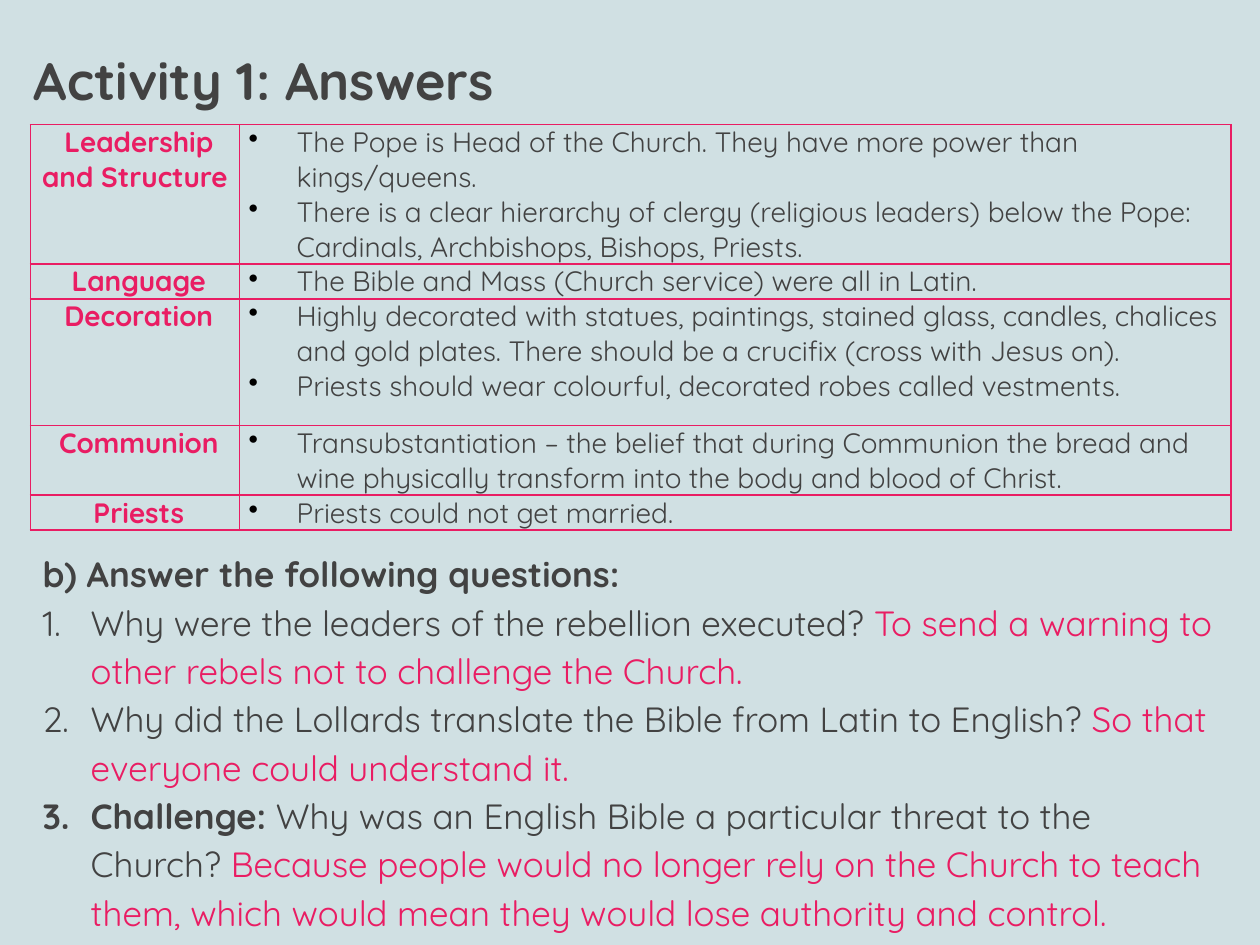
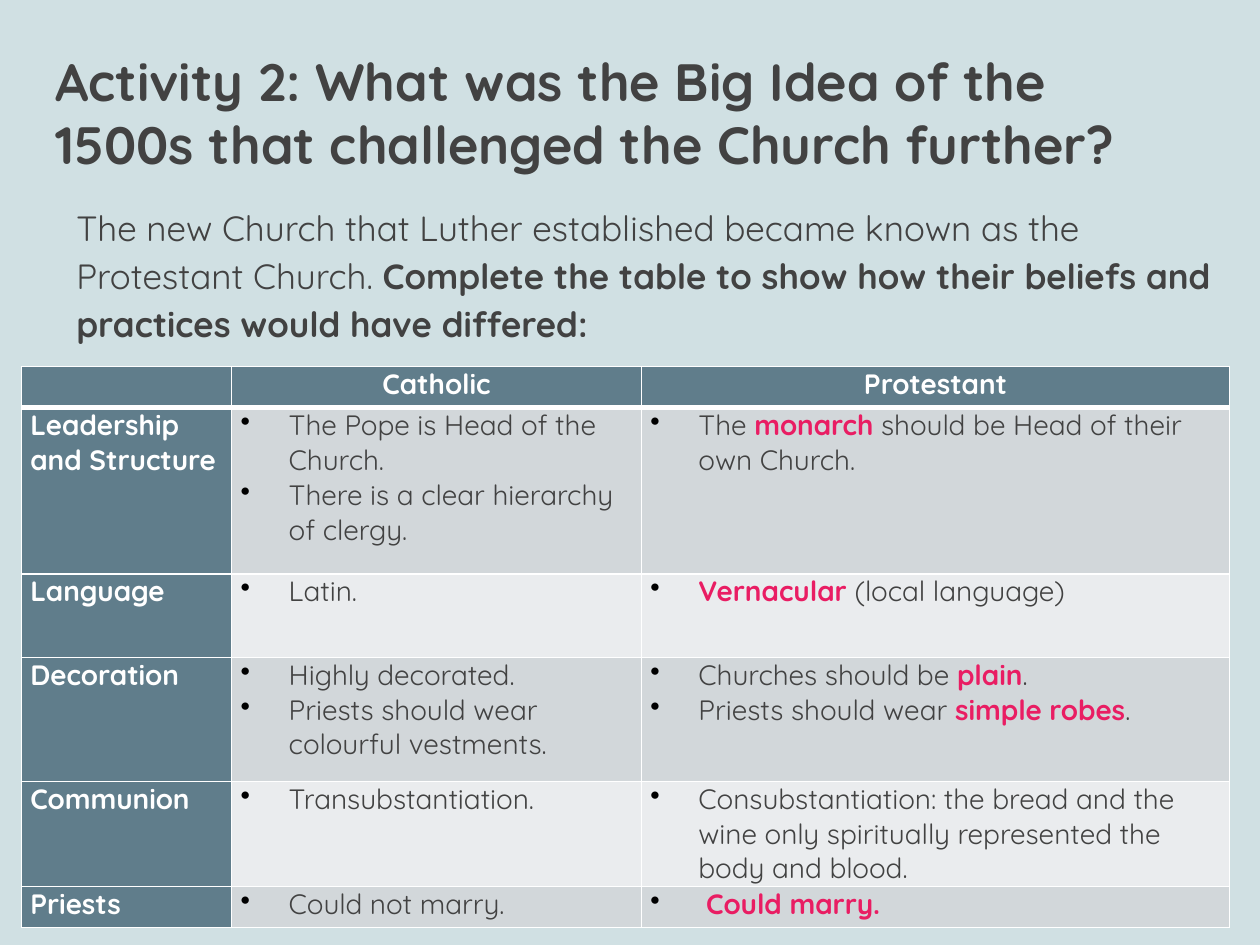
from lxml.etree import SubElement, Element
from pptx import Presentation
from pptx.dml.color import RGBColor
from pptx.enum.text import MSO_ANCHOR, MSO_AUTO_SIZE, PP_ALIGN
from pptx.oxml.ns import qn
from pptx.util import Cm, Pt

BACKGROUND = RGBColor(0xD0, 0xE0, 0xE3)
INK = RGBColor(0x42, 0x42, 0x42)
PINK = RGBColor(0xE9, 0x1D, 0x63)
SLATE = RGBColor(0x60, 0x7D, 0x8B)
BANDS = (RGBColor(0xD2, 0xD7, 0xDA), RGBColor(0xEA, 0xEC, 0xEE))
WHITE = RGBColor(0xFF, 0xFF, 0xFF)
BLACK = RGBColor(0, 0, 0)
FONT = "Quicksand"
TITLE_SIZE, BODY_SIZE, CELL_SIZE = 30, 20, 16
HANGING = Cm(0.97)

# Each paragraph is a list of spans: plain text, or (text, colour, bold)
CATHOLIC_RULES = [
    ("Leadership and Structure", [
        ["The Pope is Head of the Church. They have more power than kings/queens."],
        ["There is a clear hierarchy of clergy (religious leaders) below the Pope: "
         "Cardinals, Archbishops, Bishops, Priests."]]),
    ("Language", [["The Bible and Mass (Church service) were all in Latin."]]),
    ("Decoration", [
        ["Highly decorated with statues, paintings, stained glass, candles, chalices "
         "and gold plates. There should be a crucifix (cross with Jesus on)."],
        ["Priests should wear colourful, decorated robes called vestments."]]),
    ("Communion", [
        ["Transubstantiation – the belief that during Communion the bread and wine "
         "physically transform into the body and blood of Christ."]]),
    ("Priests", [["Priests could not get married."]]),
]
QUESTIONS = [
    ["Why were the leaders of the rebellion executed? ",
     ("To send a warning to other rebels not to challenge the Church.", PINK, False)],
    ["Why did the Lollards translate the Bible from Latin to English? ",
     ("So that everyone could understand it.", PINK, False)],
    [("Challenge:", INK, True),
     " Why was an English Bible a particular threat to the Church? ",
     ("Because people would no longer rely on the Church to teach them, which would "
      "mean they would lose authority and control.", PINK, False)],
]
COMPARISON = [
    ("Leadership and Structure",
     [["The Pope is Head of the Church."], ["There is a clear hierarchy of clergy."]],
     [["The ", ("monarch", PINK, True), " should be Head of their own Church."]]),
    ("Language",
     [["Latin."]],
     [[("Vernacular", PINK, True), " (local language)"]]),
    ("Decoration",
     [["Highly decorated."], ["Priests should wear colourful vestments."]],
     [["Churches should be ", ("plain", PINK, True), "."],
      ["Priests should wear ", ("simple robes", PINK, True), "."]]),
    ("Communion",
     [["Transubstantiation."]],
     [["Consubstantiation: the bread and the wine only spiritually represented "
       "the body and blood."]]),
    ("Priests",
     [["Could not marry."]],
     [[" ", ("Could marry.", PINK, True)]]),
]


# Text
def set_font(para, size, colour=INK, bold=False):
    font = para.font
    font.name, font.size, font.bold = FONT, Pt(size), bold
    font.color.rgb = colour


def add_marker(para, kind, colour, **settings):
    props = para._p.get_or_add_pPr()
    props.set("marL", str(HANGING))
    props.set("indent", str(-HANGING))
    marker_colour = SubElement(props, qn("a:buClr"))
    SubElement(marker_colour, qn("a:srgbClr"), val=str(colour))
    SubElement(props, qn(kind), **settings)


def add_spans(para, spans):
    for item in spans:
        span = para.add_run()
        if isinstance(item, str):
            span.text = item
        else:
            span.text, span.font.color.rgb, span.font.bold = item


def next_para(frame, first):
    return frame.paragraphs[0] if first else frame.add_paragraph()


# Page parts
def add_page(deck):
    page = deck.slides.add_slide(deck.slide_layouts[5])
    page.background.fill.solid()
    page.background.fill.fore_color.rgb = BACKGROUND
    return page


def prepare_frame(frame):
    frame.word_wrap = True
    frame.auto_size = MSO_AUTO_SIZE.NONE
    frame.margin_left = frame.margin_right = Cm(0.25)
    frame.margin_top = frame.margin_bottom = Cm(0.25)


def place_title(page, text, left, top, width, height):
    title = page.shapes.title
    title.left, title.top, title.width, title.height = map(Cm, (left, top, width, height))
    frame = title.text_frame
    prepare_frame(frame)
    frame.vertical_anchor = MSO_ANCHOR.BOTTOM
    frame.text = text
    para = frame.paragraphs[0]
    para.alignment = PP_ALIGN.LEFT
    para.line_spacing = 1.0
    set_font(para, TITLE_SIZE, bold=True)


def add_body(page, left, top, width, height):
    box = page.shapes.add_textbox(*map(Cm, (left, top, width, height)))
    prepare_frame(box.text_frame)
    return box


def add_questions(page, left, top, width, height):
    box = add_body(page, left, top, width, height)
    box.fill.solid()
    box.fill.fore_color.rgb = BACKGROUND
    frame = box.text_frame
    heading = frame.paragraphs[0]
    heading.text = "b) Answer the following questions:"
    heading.line_spacing = 1.15
    set_font(heading, BODY_SIZE, bold=True)
    for question in QUESTIONS:
        para = frame.add_paragraph()
        para.line_spacing = 1.15
        add_marker(para, "a:buAutoNum", INK, type="arabicPeriod")
        set_font(para, BODY_SIZE)
        add_spans(para, question)


def add_introduction(page, left, top, width, height):
    para = add_body(page, left, top, width, height).text_frame.paragraphs[0]
    para.line_spacing = 1.15
    para._p.get_or_add_pPr().set("marL", str(Cm(0.43)))
    set_font(para, BODY_SIZE)
    add_spans(para, [
        "The new Church that Luther established became known as the Protestant Church. ",
        ("Complete the table to show how their beliefs and practices would have "
         "differed:", INK, True)])


# Tables
def add_grid(page, left, top, widths, heights):
    size = Cm(sum(widths)), Cm(sum(heights))
    table = page.shapes.add_table(len(heights), len(widths), Cm(left), Cm(top), *size).table
    for column, width in zip(table.columns, widths):
        column.width = Cm(width)
    for row, height in zip(table.rows, heights):
        row.height = Cm(height)
    return table


def style_cell(cell, border, fill=None, top=1, bottom=1):
    cell.margin_left = cell.margin_right = Cm(0.18)
    cell.margin_top = cell.margin_bottom = 0
    if fill is None:
        cell.fill.background()
    else:
        cell.fill.solid()
        cell.fill.fore_color.rgb = fill
    props = cell._tc.get_or_add_tcPr()
    sides = (("a:lnL", 1), ("a:lnR", 1), ("a:lnT", top), ("a:lnB", bottom))
    for place, (side, points) in enumerate(sides):
        line = Element(qn(side), w=str(Pt(points)))
        solid = SubElement(line, qn("a:solidFill"))
        SubElement(solid, qn("a:srgbClr"), val=str(border))
        props.insert(place, line)


def fill_label(cell, text, colour, alignment):
    para = cell.text_frame.paragraphs[0]
    para.text = text
    para.alignment = alignment
    set_font(para, CELL_SIZE, colour, True)


def fill_bullets(cell, points):
    for index, spans in enumerate(points):
        para = next_para(cell.text_frame, index == 0)
        add_marker(para, "a:buChar", BLACK, char="•")
        set_font(para, CELL_SIZE)
        add_spans(para, spans)


def add_answer_table(page, left, top):
    table = add_grid(page, left, top, (4.22, 19.99), (2.8, 0.7, 2.55, 1.4, 0.7))
    for index, (label, points) in enumerate(CATHOLIC_RULES):
        label_cell, points_cell = table.rows[index].cells
        style_cell(label_cell, PINK)
        style_cell(points_cell, PINK)
        fill_label(label_cell, " " + label, PINK, PP_ALIGN.CENTER)
        fill_bullets(points_cell, points)


def add_comparison_table(page, left, top):
    table = add_grid(page, left, top, (4.24, 8.26, 11.86),
                     (0.83, 3.35, 1.68, 2.5, 2.12, 0.83))
    # Header row
    for cell, heading in zip(table.rows[0].cells, ("", "Catholic", "Protestant")):
        style_cell(cell, WHITE, SLATE, bottom=3)
        fill_label(cell, heading, WHITE, PP_ALIGN.CENTER)
    # Banded rows
    for index, (label, *beliefs) in enumerate(COMPARISON):
        label_cell, *belief_cells = table.rows[index + 1].cells
        top_line = 3 if index == 0 else 1
        style_cell(label_cell, WHITE, SLATE, top=top_line)
        fill_label(label_cell, label, WHITE, PP_ALIGN.LEFT)
        for cell, points in zip(belief_cells, beliefs):
            style_cell(cell, WHITE, BANDS[index % 2], top=top_line)
            fill_bullets(cell, points)


# Slides
def build_answers(deck):
    page = add_page(deck)
    place_title(page, "Activity 1: Answers", 0.43, 0.46, 23.5, 2.03)
    add_questions(page, 0.61, 10.77, 24.2, 8.13)
    add_answer_table(page, 0.61, 2.51)


def build_comparison(deck):
    page = add_page(deck)
    place_title(page, "Activity 2: What was the Big Idea of the 1500s that "
                "challenged the Church further?", 0.86, 0.99, 23.5, 2.79)
    add_introduction(page, 0.86, 3.78, 23.93, 13.23)
    add_comparison_table(page, 0.43, 7.39)


def main():
    deck = Presentation()
    deck.slide_width, deck.slide_height = Cm(25.4), Cm(19.05)
    build_answers(deck)
    build_comparison(deck)
    deck.save("out.pptx")


if __name__ == "__main__":
    main()
